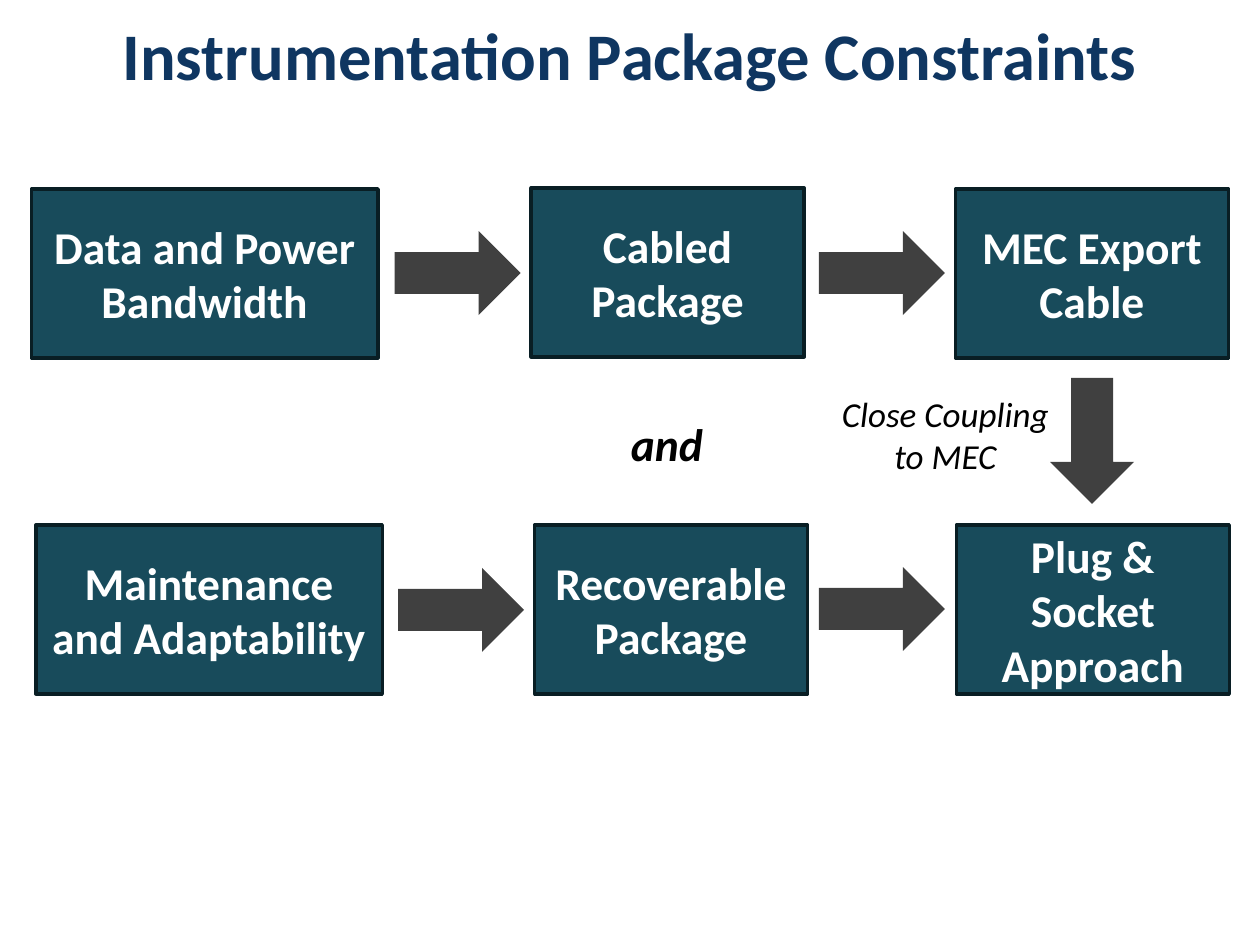
"""Build the instrumentation package constraints flow slide."""
from dataclasses import dataclass
from typing import Any

from pptx import Presentation
from pptx import util as u
from pptx.dml.color import RGBColor
from pptx.enum import shapes, text


@dataclass(frozen=True)
class Theme:
    font: str = "Calibri"
    heading: str = "0F3661"
    box: str = "184B5B"
    border: str = "091E24"
    arrow: str = "404040"
    light: str = "FFFFFF"
    dark: str = "000000"
    title_size: float = 38
    body_size: float = 26
    note_size: float = 20


@dataclass(frozen=True)
class Step:
    label: str
    left: float
    top: float
    width: float = 156
    height: float = 96.5


@dataclass(frozen=True)
class Arrow:
    left: float
    top: float
    rotation: float = 0
    width: float = 72
    height: float = 48


THEME = Theme()
STEPS = (
    Step("Data and Power Bandwidth", 18, 108, width=198),
    Step("Cabled Package", 303.5, 107.5),
    Step("MEC Export Cable", 546, 108),
    Step("Maintenance and Adaptability", 20.5, 300, width=198),
    Step("Recoverable Package", 305.5, 300),
    Step("Plug & Socket Approach", 546.5, 300),
)
ARROWS = (
    Arrow(225.5, 132),
    Arrow(468, 132),
    Arrow(227.5, 324.5),
    Arrow(468, 324),
    Arrow(588, 228, rotation=90),
)


def write(shape: Any, wording: str, *, size: float, color: str,
          bold: bool = False, italic: bool = False, wrap: bool = True,
          align: Any = text.PP_ALIGN.CENTER,
          anchor: Any = text.MSO_ANCHOR.TOP) -> None:
    frame = shape.text_frame
    frame.text = wording
    frame.word_wrap = wrap
    frame.vertical_anchor = anchor
    paragraph = frame.paragraphs[0]
    paragraph.alignment = align
    font = paragraph.runs[0].font
    font.name, font.size = THEME.font, u.Pt(size)
    font.bold, font.italic = bold, italic
    font.color.rgb = RGBColor.from_string(color)


def add_block(slide: Any, kind: Any, block: Step | Arrow, fill: str) -> Any:
    shape = slide.shapes.add_shape(
        kind, u.Pt(block.left), u.Pt(block.top), u.Pt(block.width), u.Pt(block.height))
    shape.shadow.inherit = False
    shape.fill.solid()
    shape.fill.fore_color.rgb = RGBColor.from_string(fill)
    return shape


def add_step(slide: Any, step: Step) -> None:
    box = add_block(slide, shapes.MSO_SHAPE.RECTANGLE, step, THEME.box)
    box.line.color.rgb = RGBColor.from_string(THEME.border)
    box.line.width = u.Pt(2)
    write(box, step.label, size=THEME.body_size, color=THEME.light, bold=True,
          anchor=text.MSO_ANCHOR.MIDDLE)


def add_arrow(slide: Any, arrow: Arrow) -> None:
    pointer = add_block(slide, shapes.MSO_SHAPE.RIGHT_ARROW, arrow, THEME.arrow)
    pointer.line.fill.background()
    pointer.rotation = arrow.rotation


def add_title(slide: Any, wording: str) -> None:
    title = slide.shapes.title
    title.left, title.top, title.width, title.height = map(u.Pt, (0, 8, 720, 46))
    write(title, wording, size=THEME.title_size, color=THEME.heading, bold=True)
    frame = title.text_frame
    frame.margin_left = frame.margin_right = frame.margin_top = frame.margin_bottom = 0
    frame.auto_size = text.MSO_AUTO_SIZE.SHAPE_TO_FIT_TEXT


def add_note(slide: Any, wording: str, left: float, top: float,
             width: float, height: float, **style: Any) -> None:
    note = slide.shapes.add_textbox(*map(u.Pt, (left, top, width, height)))
    write(note, wording, color=THEME.dark, italic=True, **style)
    note.text_frame.auto_size = text.MSO_AUTO_SIZE.SHAPE_TO_FIT_TEXT


def main() -> None:
    deck = Presentation()
    deck.slide_width, deck.slide_height = u.Pt(720), u.Pt(540)
    slide = deck.slides.add_slide(deck.slide_layouts.get_by_name("Title Only"))
    add_title(slide, "Instrumentation Package Constraints")
    for step in STEPS:
        add_step(slide, step)
    for arrow in ARROWS:
        add_arrow(slide, arrow)
    add_note(slide, "Close Coupling to MEC", 468, 221, 144.5, 55.5, size=THEME.note_size)
    add_note(slide, "and", 353.5, 234, 56, 39, size=THEME.body_size, bold=True,
             wrap=False, align=text.PP_ALIGN.LEFT)
    deck.save("out.pptx")


if __name__ == "__main__":
    main()
